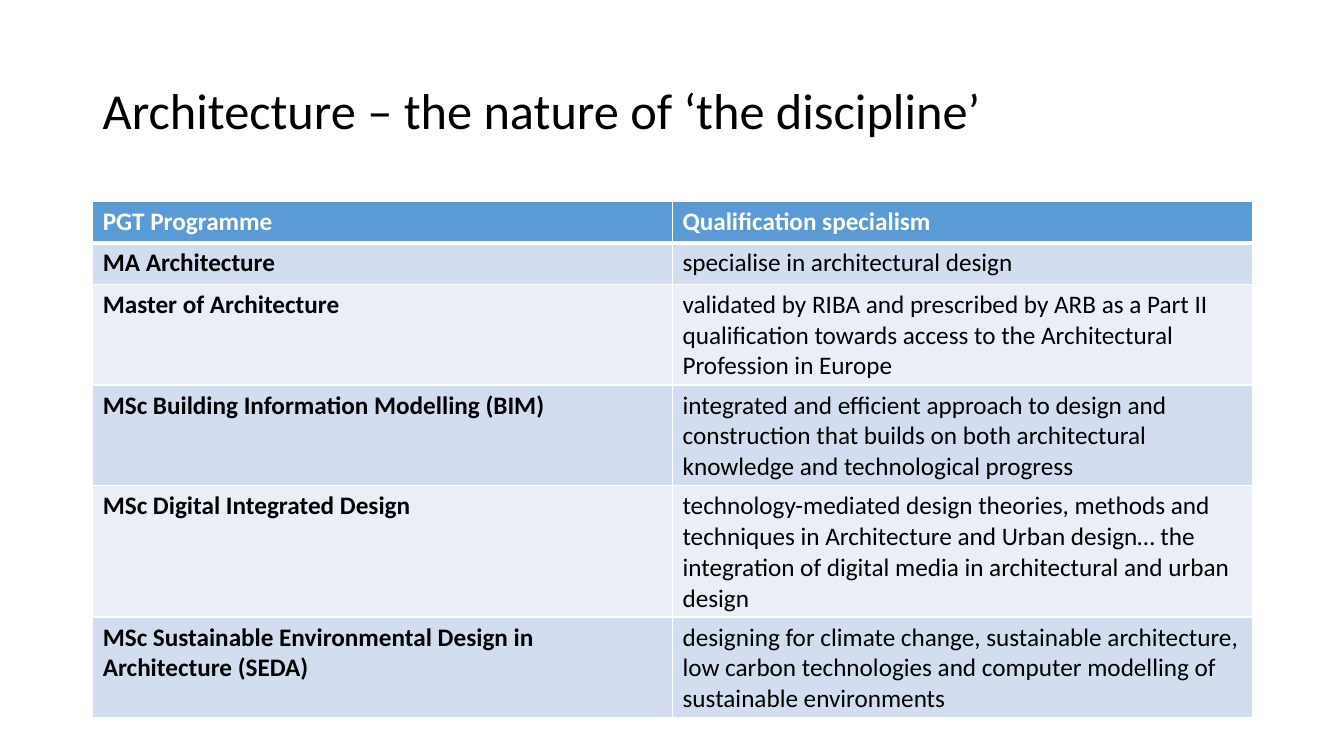
from lxml.etree import SubElement
from pptx import Presentation
from pptx.dml.color import RGBColor
from pptx.enum.text import MSO_ANCHOR
from pptx.oxml.ns import qn
from pptx.util import Inches, Pt

FONT = "Calibri"
WHITE, BLACK = "FFFFFF", "000000"
HEADER_FILL = "5B9BD5"
BAND_FILLS = ["EAEFF7", "D2DEEF"]
LEFT, WIDTH = 0.92, 11.5
ROW_HEIGHT = 0.41

TITLE = "Architecture – the nature of ‘the discipline’"
PROGRAMMES = [
    ("PGT Programme", "Qualification specialism"),
    ("MA Architecture", "specialise in architectural design"),
    ("Master of Architecture",
     "validated by RIBA and prescribed by ARB as a Part II qualification "
     "towards access to the Architectural Profession in Europe"),
    ("MSc Building Information Modelling (BIM)",
     "integrated and efficient approach to design and construction that "
     "builds on both architectural knowledge and technological progress"),
    ("MSc Digital Integrated Design",
     "technology-mediated design theories, methods and techniques in "
     "Architecture and Urban design… the integration of digital media in "
     "architectural and urban design"),
    ("MSc Sustainable Environmental Design in Architecture (SEDA)",
     "designing for climate change, sustainable architecture, low carbon "
     "technologies and computer modelling of sustainable environments"),
]


def colour(value):
    """Turn a hex string into a colour."""
    return RGBColor.from_string(value)


def write(frame, text, size=18, color=BLACK, bold=False, spacing=None):
    """Write one formatted paragraph into a text frame."""
    para = frame.paragraphs[0]
    para.line_spacing = spacing
    span = para.add_run()
    span.text = text
    span.font.name = FONT
    span.font.size = Pt(size)
    span.font.bold = bold
    span.font.color.rgb = colour(color)


def add_title(page, text):
    """Add the slide title in a vertically centred box."""
    box = page.shapes.add_textbox(
        Inches(LEFT), Inches(0.4), Inches(WIDTH), Inches(1.45))
    frame = box.text_frame
    frame.word_wrap = True
    frame.vertical_anchor = MSO_ANCHOR.MIDDLE
    write(frame, text, size=36, spacing=0.9)


def set_borders(cell, widths):
    """Draw white borders of the given widths in points, keyed by side."""
    properties = cell._tc.get_or_add_tcPr()
    for side, width in widths.items():
        line = SubElement(properties, qn(f"a:ln{side}"), w=str(Pt(width)))
        fill = SubElement(line, qn("a:solidFill"))
        SubElement(fill, qn("a:srgbClr"), val=WHITE)


def add_programme_table(page, rows):
    """Add the banded table with a header row and bold first column."""
    columns = len(rows[0])
    table = page.shapes.add_table(
        len(rows), columns, Inches(LEFT), Inches(2),
        Inches(WIDTH), Inches(ROW_HEIGHT * len(rows))).table
    for column in table.columns:
        column.width = Inches(WIDTH / columns)
    for row_index, texts in enumerate(rows):
        table.rows[row_index].height = Inches(ROW_HEIGHT)
        header = row_index == 0
        for column_index, text in enumerate(texts):
            cell = table.cell(row_index, column_index)
            set_borders(cell, {"L": 1, "R": 1,
                               "T": 3 if row_index == 1 else 1,
                               "B": 3 if header else 1})
            cell.fill.solid()
            cell.fill.fore_color.rgb = colour(
                HEADER_FILL if header else BAND_FILLS[row_index % 2])
            write(cell.text_frame, text, color=WHITE if header else BLACK,
                  bold=header or column_index == 0)


def main():
    """Build and save the slide."""
    deck = Presentation()
    deck.slide_width, deck.slide_height = Inches(13.33), Inches(7.5)
    page = deck.slides.add_slide(deck.slide_layouts[6])
    add_title(page, TITLE)
    add_programme_table(page, PROGRAMMES)
    deck.save("out.pptx")


if __name__ == "__main__":
    main()
